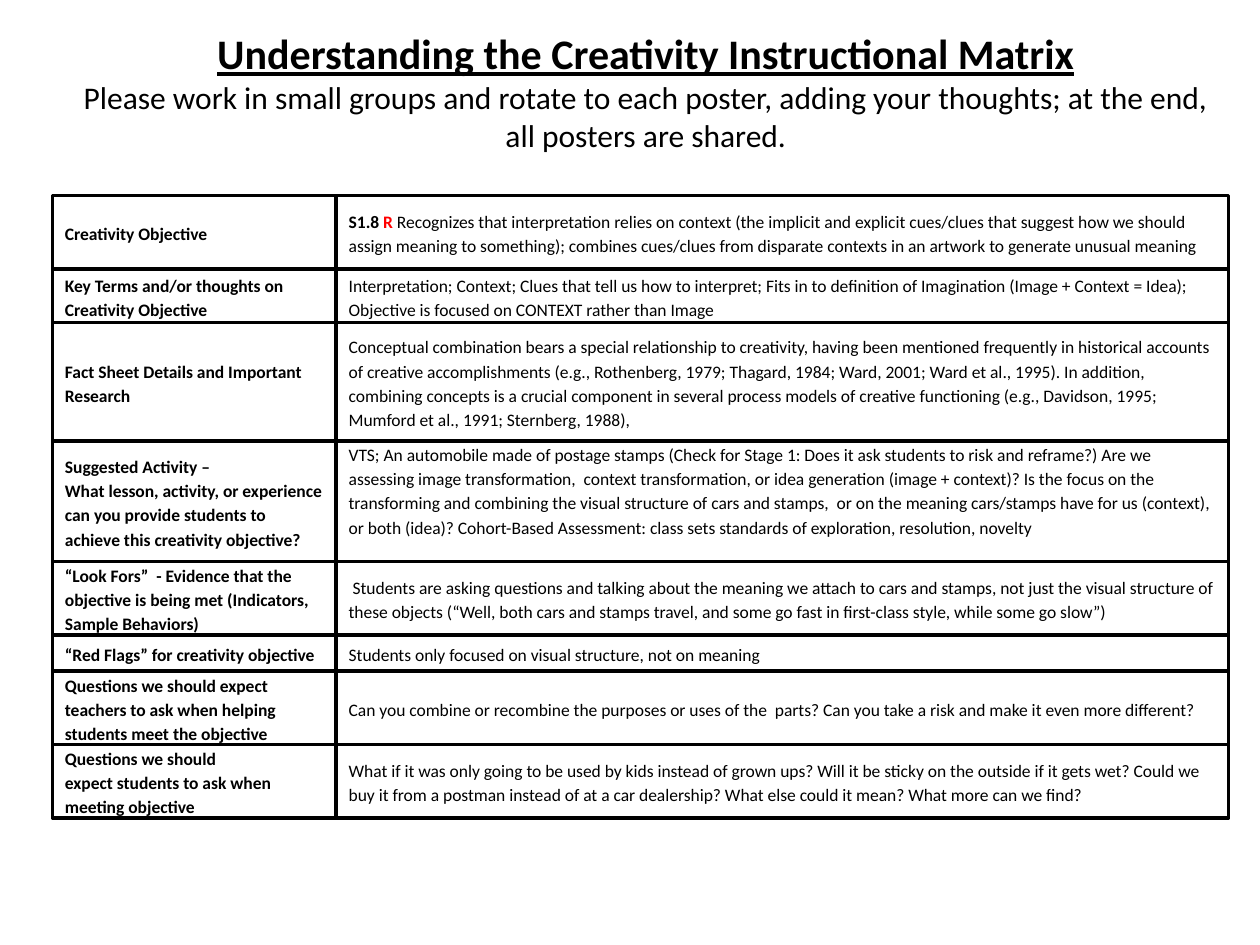
import itertools
from dataclasses import dataclass

import pptx
import pptx.dml.color
import pptx.enum.shapes
import pptx.enum.text
import pptx.util

Cm = pptx.util.Cm
Pt = pptx.util.Pt
RGB = pptx.dml.color.RGBColor
ALIGN = pptx.enum.text.PP_ALIGN
ANCHOR = pptx.enum.text.MSO_ANCHOR


@dataclass(frozen=True)
class Theme:
    font: str = "Calibri"
    ink: RGB = RGB(0, 0, 0)
    accent: RGB = RGB(255, 0, 0)
    title: int = 24
    subtitle: int = 18
    body: int = 10
    border: int = 2
    spacing: float = 1.15


THEME = Theme()
LABEL_LEFT, DETAIL_LEFT, GRID_RIGHT = 1.06, 6.78, 24.77
ROW_EDGES = [3.94, 5.42, 6.5, 8.89, 11.32, 12.8, 13.53, 15.01, 16.49]
TOP_ANCHORED_ROW = 3

# Each label is a list of paragraphs.
LABELS = [
    ["Creativity Objective"],
    ["Key Terms and/or thoughts on Creativity Objective"],
    ["Fact Sheet Details and Important Research"],
    ["Suggested Activity –",
     "What lesson, activity, or experience can you provide students to "
     "achieve this creativity objective?"],
    ["“Look Fors”  - Evidence that the objective is being met "
     "(Indicators, Sample Behaviors)"],
    ["“Red Flags” for creativity objective"],
    ["Questions we should expect teachers to ask when helping students "
     "meet the objective"],
    ["Questions we should", "expect students to ask when meeting objective"],
]

# Each detail is one paragraph: a list of (text, bold, colour) runs.
DETAILS = [
    [("S1.8 ", True, THEME.ink),
     ("R ", True, THEME.accent),
     ("Recognizes that interpretation relies on context (the implicit and "
      "explicit cues/clues that suggest how we should assign meaning to "
      "something); combines cues/clues from disparate contexts in an artwork "
      "to generate unusual meaning", False, THEME.ink)],
] + [[(text, False, THEME.ink)] for text in (
    "Interpretation; Context; Clues that tell us how to interpret; Fits in to "
    "definition of Imagination (Image + Context = Idea); Objective is focused "
    "on CONTEXT rather than Image",
    "Conceptual combination bears a special relationship to creativity, having "
    "been mentioned frequently in historical accounts of creative "
    "accomplishments (e.g., Rothenberg, 1979; Thagard, 1984; Ward, 2001; Ward "
    "et al., 1995). In addition, combining concepts is a crucial component in "
    "several process models of creative functioning (e.g., Davidson, 1995; "
    "Mumford et al., 1991; Sternberg, 1988),",
    "VTS; An automobile made of postage stamps (Check for Stage 1: Does it ask "
    "students to risk and reframe?) Are we assessing image transformation,  "
    "context transformation, or idea generation (image + context)? Is the "
    "focus on the transforming and combining the visual structure of cars and "
    "stamps,  or on the meaning cars/stamps have for us (context), or both "
    "(idea)? Cohort-Based Assessment: class sets standards of exploration, "
    "resolution, novelty",
    " Students are asking questions and talking about the meaning we attach to "
    "cars and stamps, not just the visual structure of these objects (“Well, "
    "both cars and stamps travel, and some go fast in first-class style, while "
    "some go slow”)",
    "Students only focused on visual structure, not on meaning",
    "Can you combine or recombine the purposes or uses of the  parts? Can you "
    "take a risk and make it even more different?",
    "What if it was only going to be used by kids instead of grown ups? Will "
    "it be sticky on the outside if it gets wet? Could we buy it from a "
    "postman instead of at a car dealership? What else could it mean? What "
    "more can we find?",
)]


def add_run(p, text, size, bold=False, color=THEME.ink, underline=False):
    r = p.add_run()
    r.text = text
    r.font.name = THEME.font
    r.font.size = Pt(size)
    r.font.bold = bold
    r.font.underline = underline
    r.font.color.rgb = color


def add_paragraph(tf, first, align):
    p = tf.paragraphs[0] if first else tf.add_paragraph()
    p.alignment = align
    return p


def add_cell(slide, left, right, top, bottom, paragraphs):
    """Draw one bordered box of the matrix and return its text frame."""
    sp = slide.shapes.add_shape(
        pptx.enum.shapes.MSO_SHAPE.RECTANGLE,
        Cm(left), Cm(top), Cm(right - left), Cm(bottom - top))
    sp.shadow.inherit = False
    sp.fill.background()
    sp.line.color.rgb = THEME.ink
    sp.line.width = Pt(THEME.border)
    tf = sp.text_frame
    tf.word_wrap = True
    tf.vertical_anchor = ANCHOR.MIDDLE
    for i, runs in enumerate(paragraphs):
        p = add_paragraph(tf, i == 0, ALIGN.LEFT)
        p.line_spacing = THEME.spacing
        for text, bold, color in runs:
            add_run(p, text, THEME.body, bold, color)
    return tf


def add_matrix(slide):
    rows = zip(itertools.pairwise(ROW_EDGES), LABELS, DETAILS)
    for i, ((top, bottom), label, detail) in enumerate(rows):
        add_cell(slide, LABEL_LEFT, DETAIL_LEFT, top, bottom,
                 [[(text, True, THEME.ink)] for text in label])
        tf = add_cell(slide, DETAIL_LEFT, GRID_RIGHT, top, bottom, [detail])
        if i == TOP_ANCHORED_ROW:
            tf.vertical_anchor = ANCHOR.TOP
            tf.margin_top = 0


def add_heading(slide):
    tf = slide.shapes.add_textbox(
        Cm(1.27), Cm(0.43), Cm(23.5), Cm(3.58)).text_frame
    tf.word_wrap = True
    p = add_paragraph(tf, True, ALIGN.CENTER)
    add_run(p, "Understanding the Creativity Instructional Matrix",
            THEME.title, bold=True, underline=True)
    p = add_paragraph(tf, False, ALIGN.CENTER)
    add_run(p, "Please work in small groups and rotate to each poster, adding "
            "your thoughts; at the end, all posters are shared.",
            THEME.subtitle)


def main():
    prs = pptx.Presentation()
    prs.slide_width, prs.slide_height = Cm(25.4), Cm(19.05)
    slide = prs.slides.add_slide(prs.slide_layouts[6])
    add_matrix(slide)
    add_heading(slide)
    prs.save("out.pptx")


if __name__ == "__main__":
    main()
